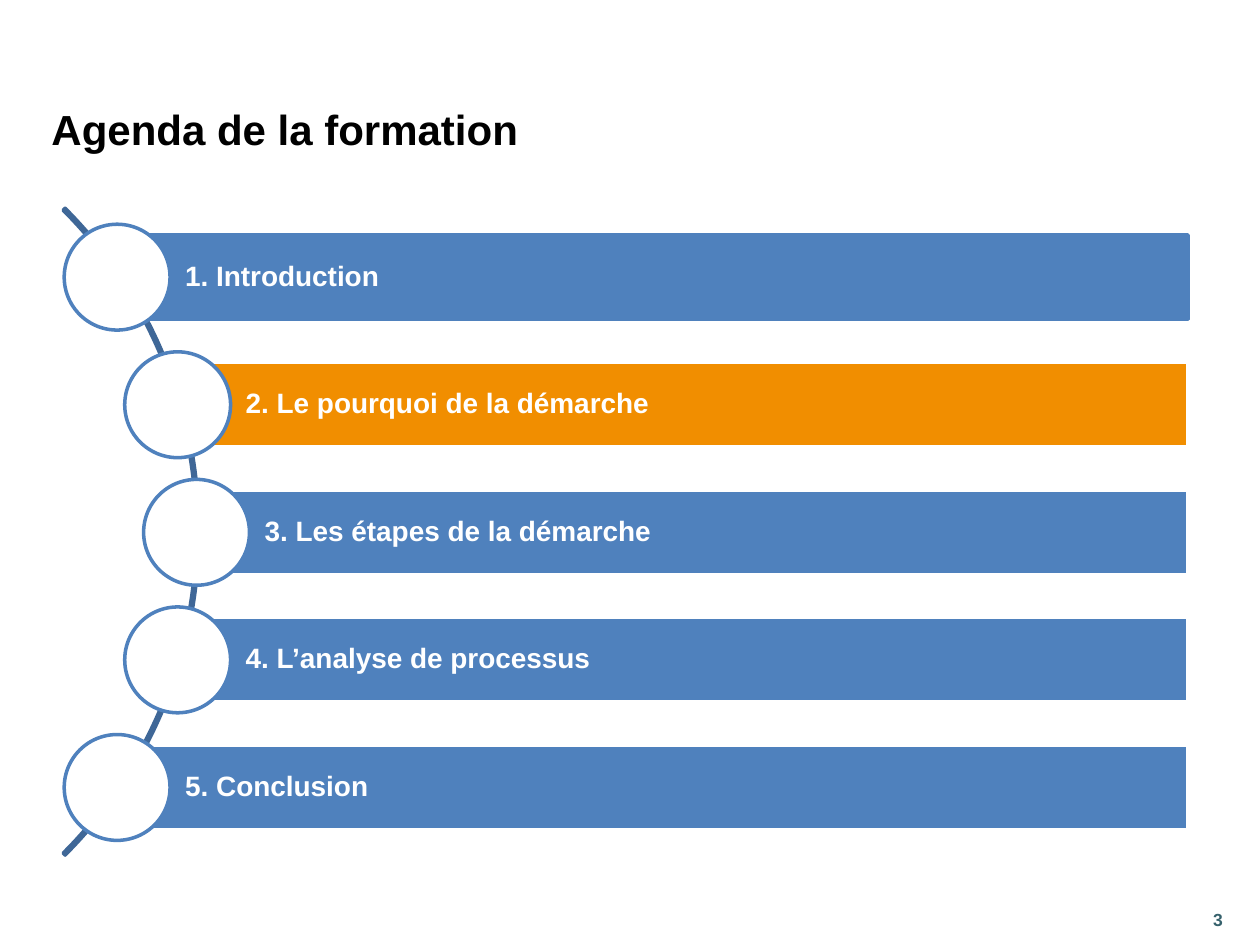
from pptx import Presentation
from pptx.dml.color import RGBColor
from pptx.enum import shapes, text
from pptx.util import Inches, Pt

COLORS = {
    "blue": "4F81BD",
    "arc": "3F6797",
    "orange": "F18E00",
    "white": "FFFFFF",
    "black": "000000",
    "number": "36616C",
}
TITLE = "Agenda de la formation"
PAGE_NUMBER = "3"
# label, left edge of the bar, fill, outline
AGENDA = [
    ("1. Introduction", 0.93, "blue", "blue"),
    ("2. Le pourquoi de la démarche", 1.41, "orange", "white"),
    ("3. Les étapes de la démarche", 1.56, "blue", "white"),
    ("4. L’analyse de processus", 1.41, "blue", "white"),
    ("5. Conclusion", 0.93, "blue", "white"),
]
FIRST_MIDDLE, STEP = 2.2, 1.0125
BAR_RIGHT, BAR_HEIGHT = 9.43, 0.67
CIRCLE = 0.84
ARC_LEFT, ARC_TOP, ARC_SIZE = -5.68, 0.59, 7.26


def color(name):
    return RGBColor.from_string(COLORS[name])


def add_shape(page, kind, left, top, width, height, fill, line):
    shape = page.shapes.add_shape(
        kind, Inches(left), Inches(top), Inches(width), Inches(height))
    shape.shadow.inherit = False
    if fill:
        shape.fill.solid()
        shape.fill.fore_color.rgb = color(fill)
    else:
        shape.fill.background()
    shape.line.color.rgb = color(line)
    shape.line.width = Pt(2)
    return shape


def write(box, words, size, ink, wrap=True):
    """Put one bold, left-aligned, vertically centred line in the box."""
    frame = box.text_frame
    frame.word_wrap = wrap
    frame.vertical_anchor = text.MSO_ANCHOR.MIDDLE
    para = frame.paragraphs[0]
    para.alignment = text.PP_ALIGN.LEFT
    span = para.add_run()
    span.text = words
    span.font.name = "Arial"
    span.font.size = Pt(size)
    span.font.bold = True
    span.font.color.rgb = color(ink)
    return frame


def add_label(page, left, top, width, height, *style, **options):
    box = page.shapes.add_textbox(
        Inches(left), Inches(top), Inches(width), Inches(height))
    write(box, *style, **options)


def add_item(page, index, label, left, fill, line):
    middle = FIRST_MIDDLE + index * STEP
    bar = add_shape(page, shapes.MSO_SHAPE.RECTANGLE, left, middle - BAR_HEIGHT / 2,
                    BAR_RIGHT - left, BAR_HEIGHT, fill, line)
    frame = write(bar, label, 16, "white")
    frame.margin_left = Inches(0.54)
    frame.margin_top = frame.margin_right = frame.margin_bottom = Inches(0.04)
    frame.paragraphs[0].line_spacing = 0.9
    add_shape(page, shapes.MSO_SHAPE.OVAL, left - CIRCLE / 2, middle - CIRCLE / 2,
              CIRCLE, CIRCLE, "white", "blue")


def main():
    deck = Presentation()
    deck.slide_width, deck.slide_height = Inches(10), Inches(7.5)
    page = deck.slides.add_slide(deck.slide_layouts[6])

    add_label(page, 9.53, 7.1, 0.47, 0.4, PAGE_NUMBER, 10, "number")
    add_label(page, 0.31, 0.78, 9.55, 0.49, TITLE, 24, "black", wrap=False)

    arc = add_shape(page, shapes.MSO_SHAPE.BLOCK_ARC, ARC_LEFT, ARC_TOP,
                    ARC_SIZE, ARC_SIZE, None, "arc")
    # Start angle 315°, end angle 45°, then the band's thickness
    for index, value in enumerate((189, 27, 0.003)):
        arc.adjustments[index] = value

    for index, item in enumerate(AGENDA):
        add_item(page, index, *item)

    deck.save("out.pptx")


if __name__ == "__main__":
    main()
